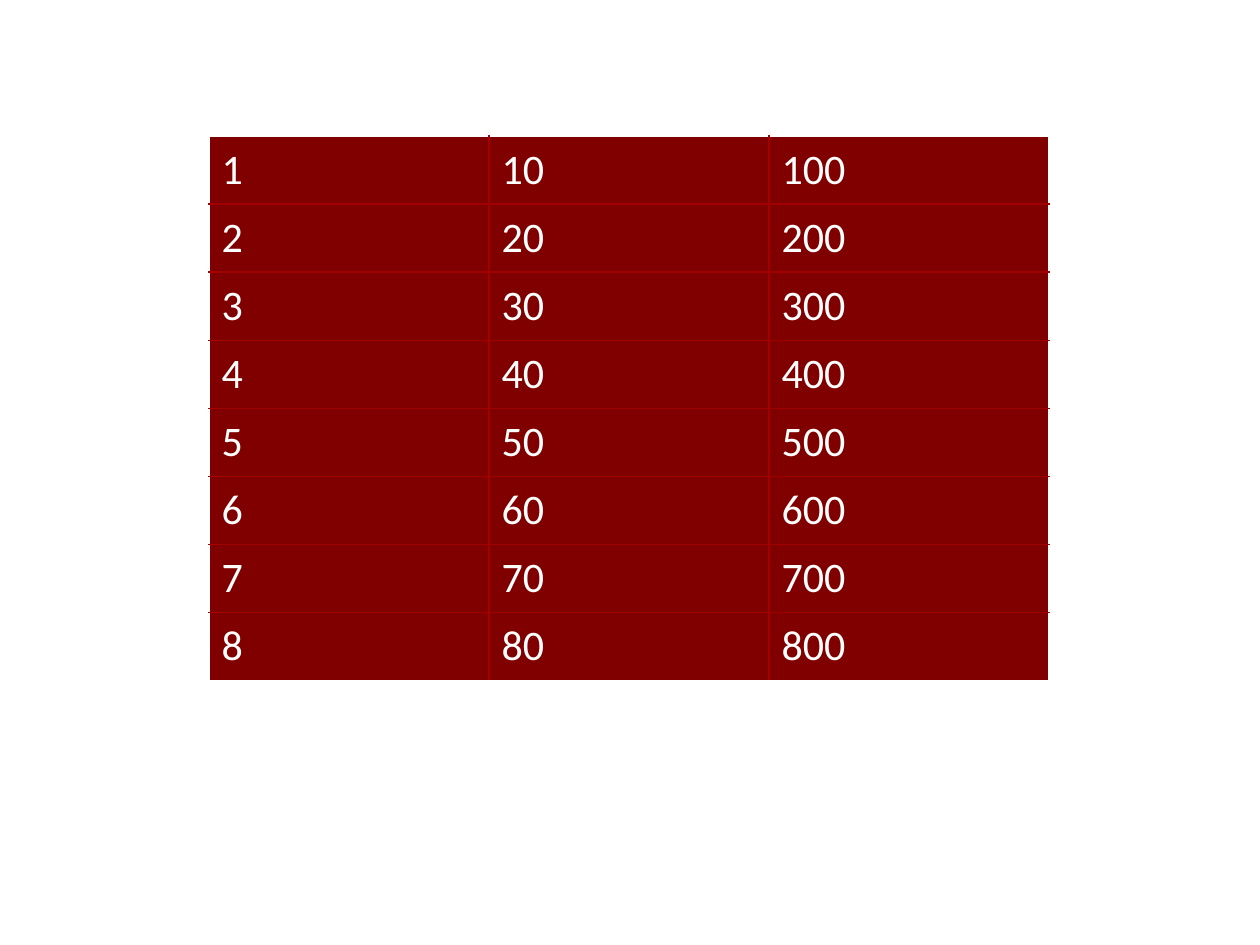
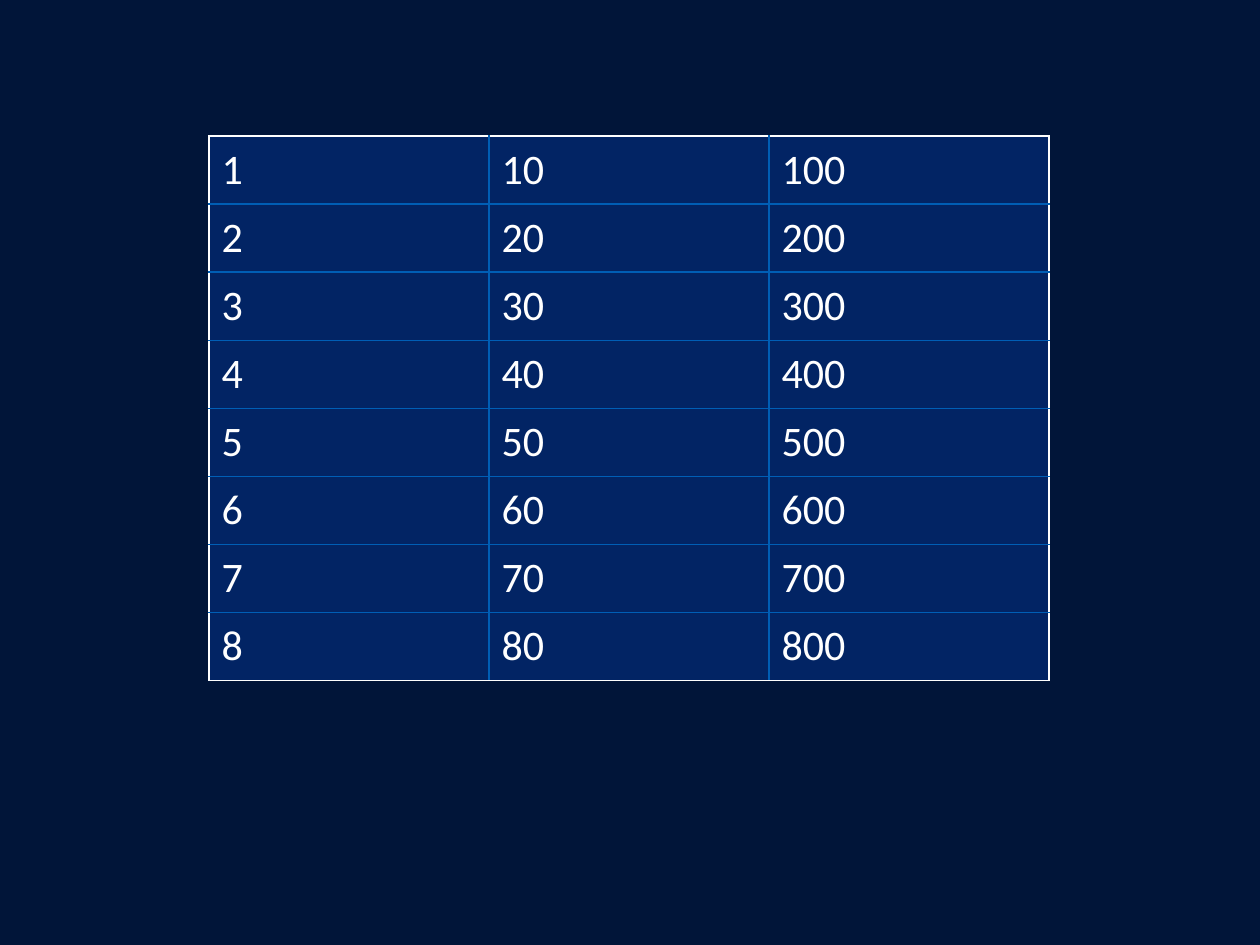
import dataclasses

import lxml.etree
import pptx
import pptx.dml.color
import pptx.enum.text
import pptx.oxml.ns
import pptx.util

Pt = pptx.util.Pt
rgb = pptx.dml.color.RGBColor.from_string
qn = pptx.oxml.ns.qn


@dataclasses.dataclass(frozen=True)
class Theme:
    white: str = "FFFFFF"
    dark_red: str = "800000"
    bright_red: str = "A20000"
    midnight: str = "011539"
    navy: str = "022464"
    bright_blue: str = "005EB5"
    font: str = "Calibri"
    text_size: int = 24
    border_width: int = 1


theme = Theme()
row_count, column_count = 8, 3
row_height, column_width = 38.88, 160
table_left, table_top = 119.5, 77.75
margin_side, margin_end = 7.2, 4.8


def add_border(cell, tag, color):
    line = lxml.etree.SubElement(cell._tc.get_or_add_tcPr(), qn(tag), w=str(Pt(theme.border_width)))
    fill = lxml.etree.SubElement(line, qn("a:solidFill"))
    lxml.etree.SubElement(fill, qn("a:srgbClr"), val=color)


deck = pptx.Presentation()
deck.slide_width, deck.slide_height = Pt(720), Pt(540)
blank_layout = deck.slide_layouts[6]

# Background, cell fill and inner grid colour of each slide
schemes = [
    (theme.white, theme.dark_red, theme.bright_red),
    (theme.midnight, theme.navy, theme.bright_blue),
]

for background, cell_fill, grid_color in schemes:
    page = deck.slides.add_slide(blank_layout)
    page.background.fill.solid()
    page.background.fill.fore_color.rgb = rgb(background)

    table = page.shapes.add_table(
        row_count, column_count, Pt(table_left), Pt(table_top),
        Pt(column_count * column_width), Pt(row_count * row_height),
    ).table
    table.first_row = False
    table.horz_banding = False
    for column in table.columns:
        column.width = Pt(column_width)
    for row in table.rows:
        row.height = Pt(row_height)

    for row_index in range(row_count):
        for column_index in range(column_count):
            cell = table.cell(row_index, column_index)
            outer_edges = {
                "a:lnL": column_index == 0,
                "a:lnR": column_index == column_count - 1,
                "a:lnT": row_index == 0,
                "a:lnB": row_index == row_count - 1,
            }
            for tag, is_outer in outer_edges.items():
                add_border(cell, tag, theme.white if is_outer else grid_color)
            cell.fill.solid()
            cell.fill.fore_color.rgb = rgb(cell_fill)

            cell.margin_left = cell.margin_right = Pt(margin_side)
            cell.margin_top = cell.margin_bottom = Pt(margin_end)
            cell.vertical_anchor = pptx.enum.text.MSO_ANCHOR.TOP
            para = cell.text_frame.paragraphs[0]
            para.text = str((row_index + 1) * 10 ** column_index)
            span = para.runs[0]
            span.font.name = theme.font
            span.font.size = Pt(theme.text_size)
            span.font.color.rgb = rgb(theme.white)

deck.save("out.pptx")
